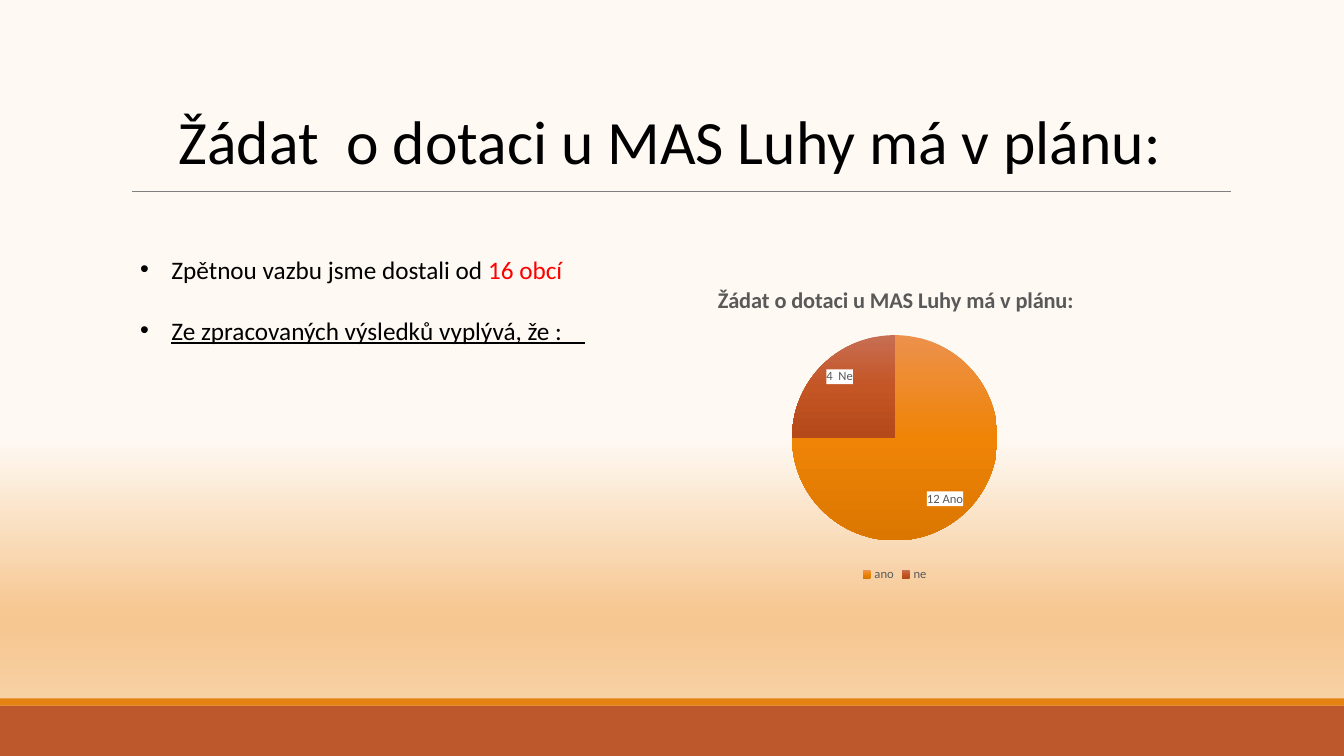
from pptx import Presentation
from pptx.chart.data import CategoryChartData
from pptx.dml.color import RGBColor
from pptx.enum.chart import XL_CHART_TYPE, XL_LABEL_POSITION, XL_LEGEND_POSITION
from pptx.enum.shapes import MSO_CONNECTOR, MSO_SHAPE
from pptx.enum.text import MSO_ANCHOR, MSO_AUTO_SIZE, PP_ALIGN
from pptx.oxml import parse_xml
from pptx.oxml.ns import nsdecls
from pptx.util import Inches, Pt


def color(hex_text):
    return RGBColor.from_string(hex_text)


def set_gradient(grad_fill, stops):
    """Replace a gradient with top-to-bottom (percent, colour) stops."""
    stops_xml = "".join(
        f'<a:gs pos="{percent * 1000}"><a:srgbClr val="{shade}"/></a:gs>'
        for percent, shade in stops)
    grad_fill.getparent().replace(grad_fill, parse_xml(
        f'<a:gradFill {nsdecls("a")} rotWithShape="1"><a:gsLst>{stops_xml}</a:gsLst>'
        '<a:lin ang="5400000" scaled="0"/></a:gradFill>'))


def set_layout(parent, index, mode="", **fractions):
    """Place a chart part by fractions of the chart area."""
    for previous in parent.xpath("c:layout"):
        parent.remove(previous)
    edges = "".join(f'<c:{edge}Mode val="edge"/>' for edge in "xy")
    values = "".join(f'<c:{key} val="{value}"/>' for key, value in fractions.items())
    parent.insert(index, parse_xml(
        f'<c:layout {nsdecls("c")}><c:manualLayout>{mode}{edges}{values}'
        '</c:manualLayout></c:layout>'))


class SlideBuilder:
    FONT = "Calibri"
    BLACK, GRAY, RED = "000000", "595959", "FF0000"

    def __init__(self, presentation):
        self.slide = presentation.slides.add_slide(presentation.slide_layouts[1])
        self.shapes = self.slide.shapes

    def style(self, font, size, shade, bold=False, underline=False):
        font.name, font.size = self.FONT, Pt(size)
        font.bold, font.underline = bold, underline
        font.color.rgb = color(shade)

    def background(self, stops):
        self.slide.background.fill.gradient()
        set_gradient(self.slide.element.xpath(".//p:bgPr/a:gradFill")[0], stops)

    def band(self, top, height, shade):
        band = self.shapes.add_shape(
            MSO_SHAPE.RECTANGLE, 0, Inches(top), Inches(13.33), Inches(height))
        band.shadow.inherit = False
        band.fill.solid()
        band.fill.fore_color.rgb = color(shade)
        band.line.fill.background()

    def rule(self, left, right, y, shade):
        rule = self.shapes.add_connector(
            MSO_CONNECTOR.STRAIGHT, Inches(left), Inches(y), Inches(right), Inches(y))
        rule.line.color.rgb = color(shade)
        rule.line.width = Pt(0.5)
        rule.element.spPr.append(parse_xml(f'<a:effectLst {nsdecls("a")}/>'))

    def place(self, placeholder, left, top, width, height):
        placeholder.left, placeholder.top = Inches(left), Inches(top)
        placeholder.width, placeholder.height = Inches(width), Inches(height)
        frame = placeholder.text_frame
        frame.word_wrap = True
        frame.auto_size = MSO_AUTO_SIZE.NONE
        frame.vertical_anchor = MSO_ANCHOR.TOP
        return frame

    def title(self, text, *box):
        frame = self.place(self.shapes.title, *box)
        frame.text = text
        heading = frame.paragraphs[0]
        heading.alignment = PP_ALIGN.CENTER
        self.style(heading.runs[0].font, 44, self.BLACK)

    def bullets(self, items, *box):
        """Fill the body with items made of (text, colour, underline) parts."""
        frame = self.place(self.slide.placeholders[1], *box)
        for number, parts in enumerate(items):
            item = frame.add_paragraph() if number else frame.paragraphs[0]
            item.space_before = Pt(22 if number else 0)
            properties = item._p.get_or_add_pPr()
            properties.set("marL", str(Inches(0.31)))
            properties.set("indent", str(-Inches(0.31)))
            properties.append(parse_xml(f'<a:buChar {nsdecls("a")} char="•"/>'))
            for text, shade, underline in parts:
                run = item.add_run()
                run.text = text
                self.style(run.font, 18, shade, underline=underline)

    def pie(self, title, slices, *box):
        """Draw a pie of (category, value, label, gradient) slices."""
        data = CategoryChartData()
        data.categories = [category for category, *_ in slices]
        data.add_series("Series 1", [value for _, value, *_ in slices])
        chart = self.shapes.add_chart(
            XL_CHART_TYPE.PIE, *(Inches(length) for length in box), data).chart
        self.style(chart.font, 10, self.BLACK)

        chart.has_title = True
        heading = chart.chart_title.text_frame
        heading.text = title
        self.style(heading.paragraphs[0].runs[0].font, 16, self.GRAY, bold=True)
        set_layout(chart.element.xpath(".//c:title")[0], 1, x=0.13, y=0.03)
        set_layout(chart.element.xpath(".//c:plotArea")[0], 0,
                   '<c:layoutTarget val="inner"/>', x=0.29, y=0.2, w=0.42, h=0.66)

        chart.has_legend = True
        chart.legend.position = XL_LEGEND_POSITION.BOTTOM
        chart.legend.include_in_layout = False
        self.style(chart.legend.font, 9, self.GRAY)

        plot = chart.plots[0]
        plot.vary_by_categories = True
        for index, (_, _, text, stops) in enumerate(slices):
            point = plot.series[0].points[index]
            point.format.fill.gradient()
            point.format.line.fill.background()
            set_gradient(chart.element.xpath(".//c:dPt/c:spPr/a:gradFill")[index], stops)
            label = point.data_label
            label.text_frame.text = text
            self.style(label.text_frame.paragraphs[0].runs[0].font, 9, self.GRAY)
            label.position = XL_LABEL_POSITION.INSIDE_END
            chart.element.xpath(".//c:dLbl/c:tx")[index].addnext(parse_xml(
                f'<c:spPr {nsdecls("c", "a")}><a:solidFill><a:srgbClr val="FFFFFF"/>'
                '</a:solidFill></c:spPr>'))


def main():
    presentation = Presentation()
    presentation.slide_width, presentation.slide_height = Inches(13.33), Inches(7.5)
    page = SlideBuilder(presentation)
    question = "Žádat o dotaci u MAS Luhy má v plánu:"

    page.background([(58, "FEF9F3"), (81, "F6C791"), (83, "F6C791"), (100, "F9DAB6")])
    page.rule(1.31, 12.21, 1.9, "808080")
    page.band(7, 0.5, "BD582C")
    page.band(6.93, 0.07, "E48312")
    page.title(question.replace(" ", "  ", 1), 1.48, 0.97, 10.34, 0.84)
    page.bullets([
        [("Zpětnou vazbu jsme dostali od ", page.BLACK, False),
         ("16 obcí", page.RED, False)],
        [("Ze zpracovaných výsledků vyplývá, že :    ", page.BLACK, True)],
    ], 1.29, 2.47, 8.72, 1.31)
    page.pie(question, [
        ("ano", 75, "12 Ano", [(0, "ED914C"), (50, "EF8407"), (100, "DB7600")]),
        ("ne", 25, "4  Ne", [(0, "C76E53"), (50, "C45525"), (100, "B5491A")]),
    ], 6.45, 2.69, 4.85, 3.12)
    presentation.save("out.pptx")


if __name__ == "__main__":
    main()
